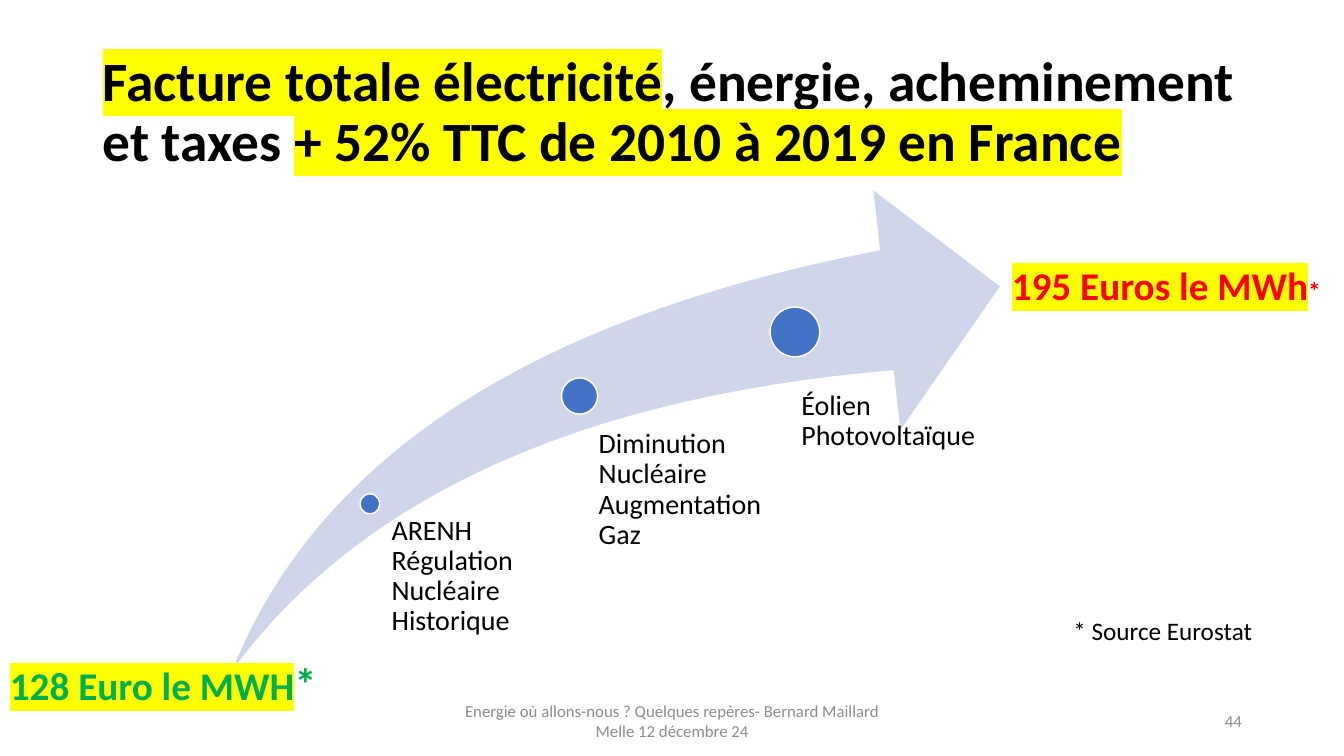
"""Build the slide on the rise of the French electricity bill from 2010 to 2019."""
from dataclasses import dataclass

import lxml.etree
import pptx
import pptx.dml.color
import pptx.enum.shapes
import pptx.enum.text
import pptx.oxml.ns
import pptx.shapes.autoshape
import pptx.slide
import pptx.util

Align = pptx.enum.text.PP_ALIGN
Anchor = pptx.enum.text.MSO_ANCHOR
Preset = pptx.enum.shapes.MSO_SHAPE


@dataclass(frozen=True)
class Theme:
    """Colours and type sizes."""
    font: str = "Calibri"
    ink: str = "000000"
    muted: str = "8C8C8C"
    low_price: str = "00B050"
    high_price: str = "FF0000"
    marker: str = "FFFF00"
    swoosh: str = "CFD5EA"
    dot: str = "4472C4"
    dot_edge: str = "FFFFFF"
    title: float = 39.6
    star: float = 32
    price: float = 28
    factor: float = 20
    note: float = 18
    footer: float = 12


THEME = Theme()


@dataclass(frozen=True)
class Box:
    """A rectangle in points."""
    left: float
    top: float
    width: float
    height: float

    def lengths(self) -> list[pptx.util.Length]:
        """Return the four lengths for a new shape."""
        return [pptx.util.Pt(n) for n in (self.left, self.top, self.width, self.height)]


@dataclass(frozen=True)
class Run:
    """A stretch of text in one style."""
    text: str
    size: float
    color: str = THEME.ink
    bold: bool = False
    marked: bool = False


@dataclass(frozen=True)
class Label:
    """A text box holding one paragraph."""
    box: Box
    runs: tuple[Run, ...]
    align: Align = Align.LEFT
    anchor: Anchor = Anchor.TOP
    insets: tuple[float, float, float, float] = (7.2, 3.6, 7.2, 3.6)
    spacing: float = 1.0
    wrap: bool = True
    grow: bool = False


@dataclass(frozen=True)
class Milestone:
    """A dot on the arrow with the factors written below it."""
    left: float
    top: float
    diameter: float
    factors: str
    factors_box: Box
    indent: float


MILESTONES = (
    Milestone(257.1, 352.8, 14.2, "ARENH Régulation Nucléaire Historique",
              Box(272.2, 368.6, 119.5, 100.8), 7.5),
    Milestone(401.1, 270, 25.8, "Diminution Nucléaire Augmentation Gaz",
              Box(414, 306.7, 131.8, 84.2), 13.7),
    Milestone(550.1, 219.4, 35.5, "Éolien Photovoltaïque",
              Box(553.7, 279.4, 155.5, 195.8), 18.7),
)

LABELS = (
    Label(Box(66.2, 28.8, 828, 104.4), (
        Run("Facture totale électricité", THEME.title, bold=True, marked=True),
        Run(", énergie, acheminement et taxes ", THEME.title, bold=True),
        Run("+ 52% TTC de 2010 à 2019 en France", THEME.title, bold=True, marked=True),
    ), anchor=Anchor.MIDDLE, spacing=0.9),
    Label(Box(318.2, 500.4, 324, 28.8), (
        Run("Energie où allons-nous ? Quelques repères- Bernard Maillard Melle 12 décembre 24",
            THEME.footer, THEME.muted),
    ), Align.CENTER, Anchor.MIDDLE),
    Label(Box(678.2, 500.4, 216, 28.8), (Run("44", THEME.footer, THEME.muted),),
          Align.RIGHT, Anchor.MIDDLE),
    Label(Box(0, 465.1, 331.9, 46.1), (
        Run("128 Euro le MWH", THEME.price, THEME.low_price, True, True),
        Run("*", THEME.star, THEME.low_price, True),
    ), grow=True),
    Label(Box(715.7, 182.9, 237.6, 41), (
        Run("195 Euros le MWh", THEME.price, THEME.high_price, True, True),
        Run("*", THEME.note, THEME.high_price, True),
    ), wrap=False, grow=True),
    Label(Box(759.6, 436.3, 144, 28.8), (Run("* Source Eurostat", THEME.note),),
          wrap=False, grow=True),
)


def rgb(color: str) -> pptx.dml.color.RGBColor:
    """Turn a hex string into a colour."""
    return pptx.dml.color.RGBColor.from_string(color)


def draw_label(slide: pptx.slide.Slide, label: Label) -> None:
    """Add a text box with its runs."""
    frame = slide.shapes.add_textbox(*label.box.lengths()).text_frame
    frame.word_wrap = label.wrap
    sizing = pptx.enum.text.MSO_AUTO_SIZE
    frame.auto_size = sizing.SHAPE_TO_FIT_TEXT if label.grow else sizing.NONE
    frame.vertical_anchor = label.anchor
    (frame.margin_left, frame.margin_top,
     frame.margin_right, frame.margin_bottom) = map(pptx.util.Pt, label.insets)
    paragraph = frame.paragraphs[0]
    paragraph.alignment = label.align
    paragraph.line_spacing = label.spacing
    for part in label.runs:
        run = paragraph.add_run()
        run.text = part.text
        run.font.name = THEME.font
        run.font.size = pptx.util.Pt(part.size)
        run.font.bold = part.bold
        run.font.color.rgb = rgb(part.color)
        if part.marked:
            qn = pptx.oxml.ns.qn
            highlight = lxml.etree.Element(qn("a:highlight"))
            lxml.etree.SubElement(highlight, qn("a:srgbClr"), val=THEME.marker)
            run.font.fill._xPr.find(qn("a:solidFill")).addnext(highlight)


def draw_shape(slide: pptx.slide.Slide, preset: Preset, box: Box,
               fill: str) -> pptx.shapes.autoshape.Shape:
    """Add a filled preset shape without outline or shadow."""
    shape = slide.shapes.add_shape(preset, *box.lengths())
    shape.shadow.inherit = False
    shape.fill.solid()
    shape.fill.fore_color.rgb = rgb(fill)
    shape.line.fill.background()
    return shape


def draw_milestone(slide: pptx.slide.Slide, milestone: Milestone) -> None:
    """Add a dot and its factors."""
    dot_box = Box(milestone.left, milestone.top, milestone.diameter, milestone.diameter)
    dot = draw_shape(slide, Preset.OVAL, dot_box, THEME.dot)
    dot.line.color.rgb = rgb(THEME.dot_edge)
    dot.line.width = pptx.util.Pt(1)
    draw_label(slide, Label(milestone.factors_box, (Run(milestone.factors, THEME.factor),),
                            insets=(milestone.indent, 0, 0, 0), spacing=0.9))


def main() -> None:
    """Draw the slide and save it."""
    deck = pptx.Presentation()
    deck.slide_width, deck.slide_height = pptx.util.Pt(960), pptx.util.Pt(540)
    slide = deck.slides.add_slide(deck.slide_layouts[6])
    price_rise = draw_shape(slide, Preset.SWOOSH_ARROW, Box(166.3, 136.1, 547.9, 342),
                            THEME.swoosh)
    price_rise.adjustments[0] = price_rise.adjustments[1] = 0.25
    for milestone in MILESTONES:
        draw_milestone(slide, milestone)
    for label in LABELS:
        draw_label(slide, label)
    deck.save("out.pptx")


if __name__ == "__main__":
    main()
